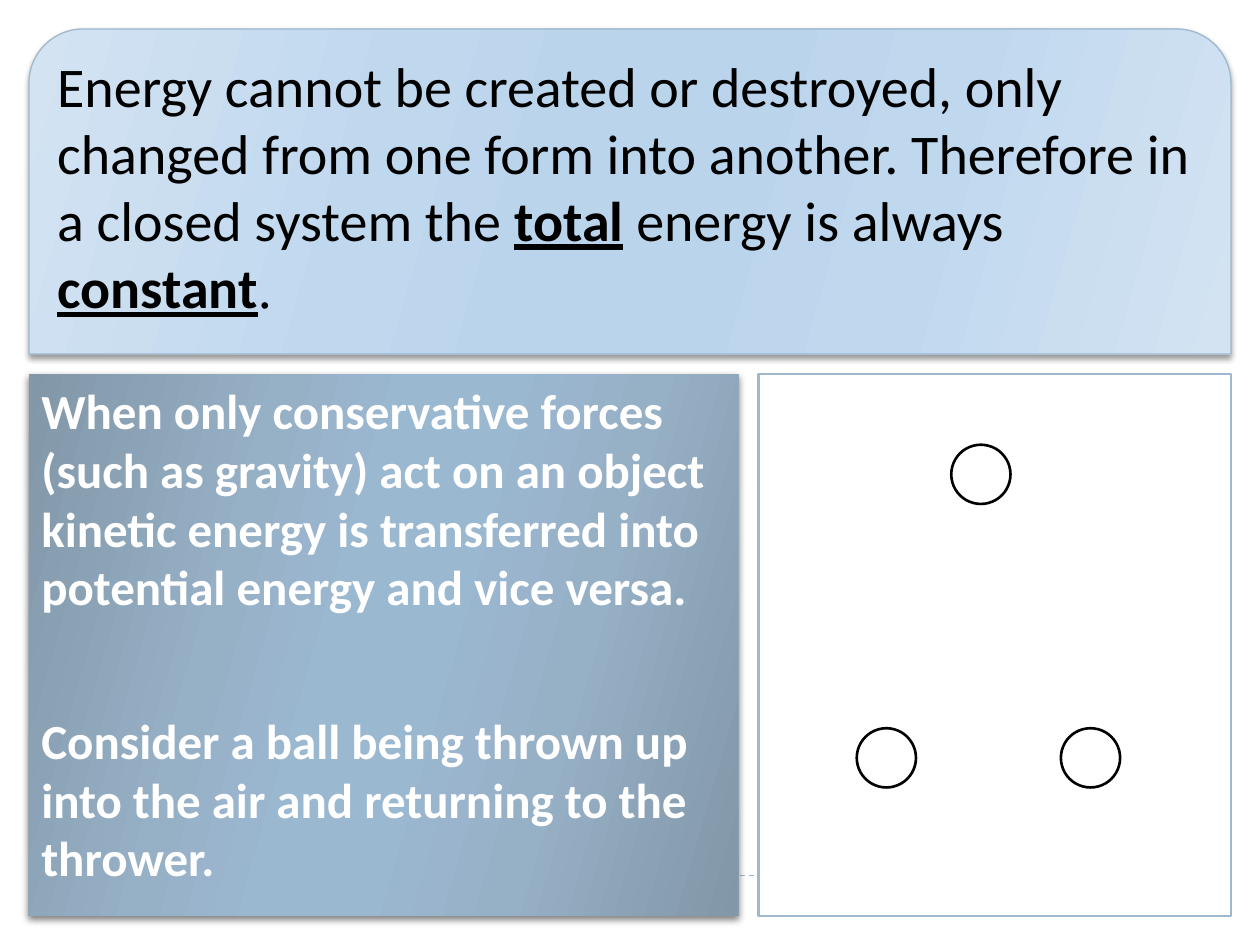
from lxml import etree
from pptx import Presentation, util as u
from pptx.dml.color import RGBColor
from pptx.enum import dml, shapes, text
from pptx.oxml import parse_xml
from pptx.oxml.ns import nsdecls, qn

BLACK = RGBColor(0x00, 0x00, 0x00)
WHITE = RGBColor(0xFF, 0xFF, 0xFF)
STEEL = RGBColor(0x9F, 0xB8, 0xCD)
# Edge, shoulder and centre of each symmetric gradient
PALE_BLUES = [RGBColor(0xD3, 0xE3, 0xF2), RGBColor(0xC0, 0xD8, 0xEE), RGBColor(0xBA, 0xD4, 0xEC)]
GREY_BLUES = [RGBColor(0x82, 0x97, 0xA8), RGBColor(0x96, 0xB0, 0xC6), RGBColor(0x9B, 0xB8, 0xD1)]
STOPS = [(0, 0), (30, 1), (45, 2), (55, 2), (73, 1), (100, 0)]

WIDTH, HEIGHT = 10, 7.5
MARGIN, GUTTER = 0.23, 0.16
LEFT_WIDTH, TOP_HEIGHT = 5.63, 2.58
LOWER_TOP = MARGIN + TOP_HEIGHT + GUTTER
LOWER_HEIGHT = HEIGHT - MARGIN - LOWER_TOP
RIGHT_LEFT = MARGIN + LEFT_WIDTH + GUTTER
BALL = 0.47

presentation = Presentation()
presentation.slide_width, presentation.slide_height = u.Inches(WIDTH), u.Inches(HEIGHT)
slide = presentation.slides.add_slide(presentation.slide_layouts[6])


def add_panel(kind, left, top, width, height, line_color=None, line_width=1.5):
    """Add a white shape without shadow, outlined if a line colour is given."""
    shape = slide.shapes.add_shape(kind, *map(u.Inches, (left, top, width, height)))
    shape.shadow.inherit = False
    shape.fill.solid()
    shape.fill.fore_color.rgb = WHITE
    if line_color is None:
        shape.line.fill.background()
    else:
        shape.line.color.rgb = line_color
        shape.line.width = u.Pt(line_width)
    return shape


def style_text_panel(shape, colors, opacity, blur, size, font_color):
    """Apply the tilted gradient, the soft shadow and the text format."""
    shape.fill.gradient()
    properties = shape._element.spPr
    gradient = properties.find(qn("a:gradFill"))
    stops = "".join(
        f'<a:gs pos="{position * 1000}"><a:srgbClr val="{colors[index]}"/></a:gs>'
        for position, index in STOPS)
    gradient.replace(gradient.find(qn("a:gsLst")),
                     parse_xml(f'<a:gsLst {nsdecls("a")}>{stops}</a:gsLst>'))
    gradient.find(qn("a:lin")).set("ang", str(16 * 60000))
    properties.find(qn("a:effectLst")).append(parse_xml(
        f'<a:outerShdw {nsdecls("a")} blurRad="{u.Pt(blur)}" dist="{u.Pt(2)}" dir="5400000" '
        f'rotWithShape="0"><a:srgbClr val="000000"><a:alpha val="{opacity * 1000}"/>'
        '</a:srgbClr></a:outerShdw>'))
    frame = shape.text_frame
    frame.word_wrap = True
    frame.vertical_anchor = text.MSO_ANCHOR.TOP
    for paragraph in frame.paragraphs:
        paragraph.alignment = text.PP_ALIGN.LEFT
        paragraph.space_after = u.Pt(10)
        for run in paragraph.runs:
            run.font.name = "Calibri"
            run.font.size = u.Pt(size)
            run.font.color.rgb = font_color


# Dashed footer rule, behind the panels
rule = slide.shapes.add_connector(
    shapes.MSO_CONNECTOR.STRAIGHT, *map(u.Inches, (0.5, 6.95, WIDTH - 0.5, 6.95)))
rule.line.color.rgb = STEEL
rule.line.width = u.Pt(0.75)
rule.line.dash_style = dml.MSO_LINE.DASH
etree.SubElement(rule._element.spPr, qn("a:effectLst"))

# Empty frame for the ball's flight
add_panel(shapes.MSO_SHAPE.RECTANGLE, RIGHT_LEFT, LOWER_TOP,
          WIDTH - MARGIN - RIGHT_LEFT, LOWER_HEIGHT, STEEL)

# Conservation law
law = add_panel(shapes.MSO_SHAPE.ROUND_2_SAME_RECTANGLE, MARGIN, MARGIN,
                WIDTH - 2 * MARGIN, TOP_HEIGHT, STEEL, 0.75)
law_paragraph = law.text_frame.paragraphs[0]
for wording, emphasis in [
    ("Energy cannot be created or destroyed, only changed from one form into another. "
     "Therefore in a closed system the ", False),
    ("total", True),
    (" energy is always ", False),
    ("constant", True),
    (".", False),
]:
    run = law_paragraph.add_run()
    run.text = wording
    run.font.bold = run.font.underline = emphasis
style_text_panel(law, PALE_BLUES, 40, 3, 32, BLACK)
law_paragraph.runs[-1].font.name = "Times New Roman"

# Explanation
explanation = add_panel(shapes.MSO_SHAPE.RECTANGLE, MARGIN, LOWER_TOP, LEFT_WIDTH, LOWER_HEIGHT)
explanation.text_frame.text = (
    "When only conservative forces (such as gravity) act on an object kinetic energy is "
    "transferred into potential energy and vice versa.\n"
    "Consider a ball being thrown up into the air and returning to the thrower.")
style_text_panel(explanation, GREY_BLUES, 50, 4, 28, WHITE)
for paragraph in explanation.text_frame.paragraphs:
    paragraph.font.bold = True
    for run in paragraph.runs:
        run.font.bold = True
explanation.text_frame.paragraphs[0].space_after = u.Pt(54)

# Ball on the way up, at the top and on the way down
for left, top in [(6.8, 5.78), (7.55, 3.53), (8.42, 5.78)]:
    add_panel(shapes.MSO_SHAPE.OVAL, left, top, BALL, BALL, BLACK)

presentation.save("out.pptx")
